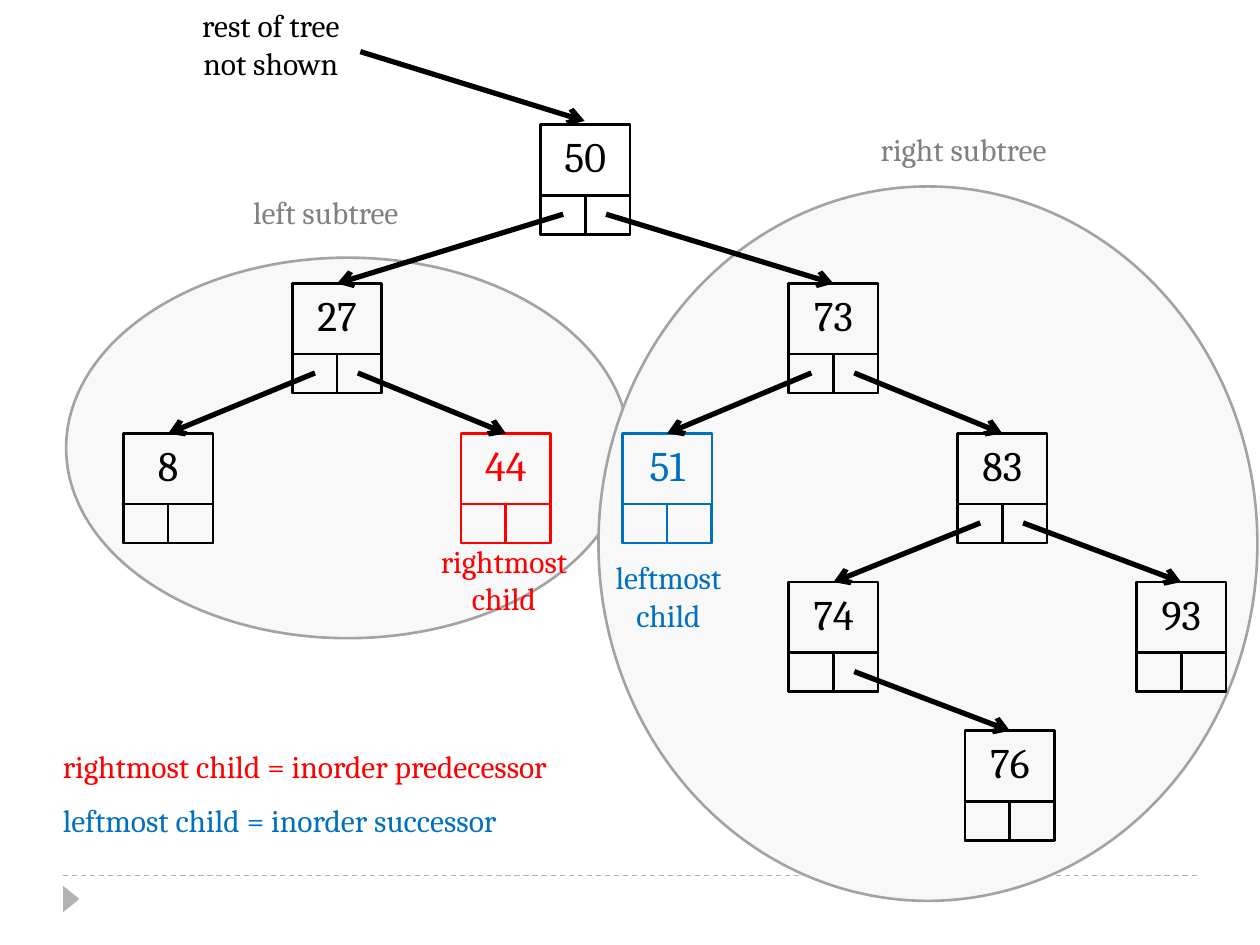
from dataclasses import dataclass

from lxml import etree
from pptx import Presentation
from pptx import util as u
from pptx.dml.color import RGBColor
from pptx.enum import dml, shapes, text
from pptx.oxml import ns


@dataclass(frozen=True)
class Theme:
    font: str = "Cambria"
    ink: str = "000000"
    predecessor: str = "FF0000"
    successor: str = "0070C0"
    caption: str = "808080"
    footer: str = "B2B2B2"
    subtree_fill: str = "F8F8F8"
    subtree_line: str = "A3A3A3"
    key_size: float = 24
    label_size: float = 18
    outline: float = 1.5
    arrow: float = 3
    rule: float = 0.75


THEME = Theme()
COLUMNS, ROWS = 100, 75
NODE_WIDTH, NODE_HEIGHT = 7.1, 8.7
CELL_WIDTH, CELL_HEIGHT = NODE_WIDTH / 2, 3.1
POINTER_X = {"left": 1.8, "right": 5.2}
POINTER_Y = 7.1
LEVELS = [9.9, 22.5, 34.4, 46.2, 58]

# key: (column, level, colour)
NODES = {
    50: (42.9, 0, THEME.ink),
    27: (23.2, 1, THEME.ink),
    73: (62.6, 1, THEME.ink),
    8: (9.8, 2, THEME.ink),
    44: (36.6, 2, THEME.predecessor),
    51: (49.4, 2, THEME.successor),
    83: (76, 2, THEME.ink),
    74: (62.6, 3, THEME.ink),
    93: (90.2, 3, THEME.ink),
    76: (76.6, 4, THEME.ink),
}
EDGES = [
    (50, "left", 27), (50, "right", 73),
    (27, "left", 8), (27, "right", 44),
    (73, "left", 51), (73, "right", 83),
    (83, "left", 74), (83, "right", 93),
    (74, "right", 76),
]
SUBTREES = [(5.25, 20.45, 44.7, 30.2), (47.5, 14.8, 52.3, 56.7)]
LABELS = [
    (["right subtree"], 68.9, 9.8, 15.9, THEME.caption),
    (["left subtree"], 19.1, 14.8, 14.2, THEME.caption),
    (["rightmost", "child"], 33.6, 42.5, 12.8, THEME.predecessor),
    (["leftmost", "child"], 47.5, 43.8, 11.1, THEME.successor),
    (["rest of tree", "not shown"], 14.7, 0, 13.6, THEME.ink),
    (["rightmost child = inorder predecessor"], 4, 58.8, 43.8, THEME.predecessor),
    (["leftmost child = inorder successor"], 4, 63.1, 39.5, THEME.successor),
]


def apply(target, values):
    for name, value in values.items():
        setattr(target, name, value)


class TreeSlide:
    def __init__(self, presentation, theme):
        self.theme = theme
        self.cell = presentation.slide_width / COLUMNS, presentation.slide_height / ROWS
        self.slide = presentation.slides.add_slide(presentation.slide_layouts[6])

    def grid(self, *lengths):
        """Turn alternating columns and rows into slide lengths."""
        return [u.Emu(round(length * self.cell[i % 2])) for i, length in enumerate(lengths)]

    def shape(self, kind, box, fill=None, line=None):
        shape = self.slide.shapes.add_shape(kind, *self.grid(*box))
        shape.shadow.inherit = False
        if fill:
            shape.fill.solid()
            shape.fill.fore_color.rgb = RGBColor.from_string(fill)
        else:
            shape.fill.background()
        if line:
            shape.line.color.rgb = RGBColor.from_string(line)
            shape.line.width = u.Pt(self.theme.outline)
        else:
            shape.line.fill.background()
        return shape

    def fill_text(self, frame, lines, size, color, alignment):
        for i, line in enumerate(lines):
            paragraph = frame.paragraphs[0] if i == 0 else frame.add_paragraph()
            paragraph.alignment = alignment
            run = paragraph.add_run()
            run.text = line
            apply(run.font, {"name": self.theme.font, "size": u.Pt(size)})
            run.font.color.rgb = RGBColor.from_string(color)

    def label(self, lines, left, top, width, color):
        height = 1 + 3 * len(lines)
        frame = self.slide.shapes.add_textbox(*self.grid(left, top, width, height)).text_frame
        apply(frame, {"word_wrap": False, "auto_size": text.MSO_AUTO_SIZE.SHAPE_TO_FIT_TEXT})
        alignment = text.PP_ALIGN.CENTER if len(lines) > 1 else text.PP_ALIGN.LEFT
        self.fill_text(frame, lines, self.theme.label_size, color, alignment)

    def subtree(self, box):
        self.shape(shapes.MSO_SHAPE.OVAL, box, self.theme.subtree_fill, self.theme.subtree_line)

    def node(self, key, left, top, color):
        """Draw a key box with two child pointer cells; return the box."""
        rectangle = shapes.MSO_SHAPE.RECTANGLE
        box = self.shape(rectangle, (left, top, NODE_WIDTH, NODE_HEIGHT), line=color)
        box.text_frame.vertical_anchor = text.MSO_ANCHOR.TOP
        self.fill_text(box.text_frame, [str(key)], self.theme.key_size, color,
                       text.PP_ALIGN.CENTER)
        cell_top = top + NODE_HEIGHT - CELL_HEIGHT
        for side in range(2):
            cell_left = left + side * CELL_WIDTH
            self.shape(rectangle, (cell_left, cell_top, CELL_WIDTH, CELL_HEIGHT), line=color)
        return box

    def line(self, start, end, color, width):
        connector = self.slide.shapes.add_connector(
            shapes.MSO_CONNECTOR.STRAIGHT, *self.grid(*start, *end))
        connector.line.color.rgb = RGBColor.from_string(color)
        connector.line.width = u.Pt(width)
        etree.SubElement(connector._element.spPr, ns.qn("a:effectLst"))
        return connector

    def arrow(self, start, end, child=None):
        connector = self.line(start, end, self.theme.ink, self.theme.arrow)
        outline = connector._element.spPr.find(ns.qn("a:ln"))
        etree.SubElement(outline, ns.qn("a:tailEnd"), type="arrow")
        if child is not None:
            connector.end_connect(child, 0)

    def footer(self):
        rule = self.line((5, 69.5), (95, 69.5), self.theme.footer, self.theme.rule)
        rule.line.dash_style = dml.MSO_LINE.DASH
        marker = self.shape(shapes.MSO_SHAPE.ISOSCELES_TRIANGLE,
                            (4.6, 70.7, 2.1, 1.3), self.theme.footer)
        marker.rotation = 90


def main():
    presentation = Presentation()
    apply(presentation, {"slide_width": u.Inches(10), "slide_height": u.Inches(7.5)})
    tree = TreeSlide(presentation, THEME)
    tree.footer()
    for box in SUBTREES:
        tree.subtree(box)
    boxes = {key: tree.node(key, column, LEVELS[level], color)
             for key, (column, level, color) in NODES.items()}
    tree.arrow((28.6, 4.1), (46.4, 9.6))
    for parent, side, child in EDGES:
        column, level, _ = NODES[parent]
        child_column, child_level, _ = NODES[child]
        tree.arrow((column + POINTER_X[side], LEVELS[level] + POINTER_Y),
                   (child_column + NODE_WIDTH / 2, LEVELS[child_level]), boxes[child])
    for label in LABELS:
        tree.label(*label)
    presentation.save("out.pptx")


if __name__ == "__main__":
    main()
